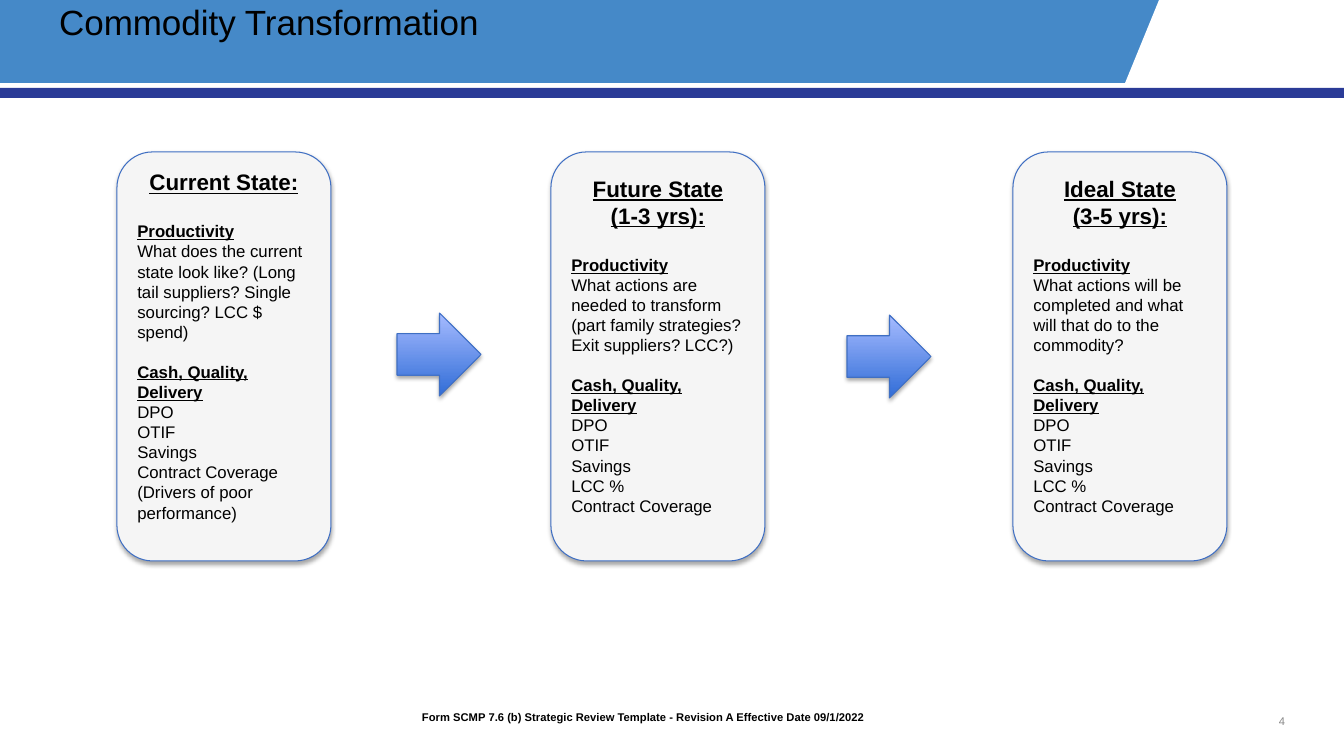
from lxml import etree
from pptx import Presentation
from pptx.dml.color import RGBColor
from pptx.enum.shapes import MSO_SHAPE as Preset
from pptx.enum.text import MSO_ANCHOR as Anchor, MSO_AUTO_SIZE as AutoSize, PP_ALIGN as Align
from pptx.oxml.ns import qn
from pptx.util import Pt

SCALE = 914400 / 100.8
COLORS = {
    "band": "4589C8", "rule": "2A3B97", "white": "FFFFFF", "black": "000000",
    "card": "F5F5F5", "outline": "3F6FC3", "arrow_dark": "316DD7",
    "arrow_light": "A6BBFF", "number": "888888",
}
PRODUCTIVITY = "Productivity"
DELIVERY = "Cash, Quality, Delivery"
MEASURES = ["DPO", "OTIF", "Savings"]
LATER_MEASURES = MEASURES + ["LCC %", "Contract Coverage"]
CARDS = [
    (117, ["Current State:"],
     "What does the current state look like? (Long tail suppliers? Single sourcing? LCC $ spend)",
     MEASURES + ["Contract Coverage", "(Drivers of poor performance)"]),
    (551, ["Future State", "(1-3 yrs):"],
     "What actions are needed to transform (part family strategies? Exit suppliers? LCC?)",
     LATER_MEASURES),
    (1013, ["Ideal State", "(3-5 yrs):"],
     "What actions will be completed and what will that do to the commodity?",
     LATER_MEASURES),
]
ARROWS = [(397, 313), (847, 315)]


def px(length):
    """Turn a length in px into EMU."""
    return round(length * SCALE)


def color(name):
    """Look up a named colour."""
    return RGBColor.from_string(COLORS[name])


def write(paragraph, text, size, tone="black", bold=False, underline=False, align=Align.LEFT):
    """Fill one paragraph and set its font."""
    paragraph.text = text
    paragraph.alignment = align
    font = paragraph.font
    font.name, font.size = "Arial", Pt(size)
    font.bold, font.underline = bold, underline
    font.color.rgb = color(tone)


def add_plain(slide, preset, box, fill):
    """Add a flat preset shape without an outline."""
    shape = slide.shapes.add_shape(preset, *map(px, box))
    shape.shadow.inherit = False
    shape.fill.solid()
    shape.fill.fore_color.rgb = color(fill)
    shape.line.fill.background()


def add_raised(slide, preset, box):
    """Add an outlined preset shape with a soft shadow below it."""
    shape = slide.shapes.add_shape(preset, *map(px, box))
    shape.line.color.rgb = color("outline")
    shape.line.width = Pt(0.75)
    shape.shadow.inherit = False
    effects = shape.element.spPr.find(qn("a:effectLst"))
    shadow = etree.SubElement(effects, qn("a:outerShdw"), blurRad=str(Pt(3.1)),
                              dist=str(Pt(1.8)), dir="5400000", rotWithShape="0")
    tone = etree.SubElement(shadow, qn("a:srgbClr"), val=COLORS["black"])
    etree.SubElement(tone, qn("a:alpha"), val="35000")
    return shape


def add_header(slide, box):
    """Draw the slanted band, the rule under it and the title."""
    left, top, width, height = box
    rule_top = top + height - 10
    add_plain(slide, Preset.RECTANGLE, (left, top, width - 14, 83), "band")
    right = left + width
    builder = slide.shapes.build_freeform(right - 185, top, scale=SCALE)
    builder.add_line_segments([(right, top), (right, rule_top), (right - 221, rule_top)])
    corner = builder.convert_to_shape()
    corner.shadow.inherit = False
    corner.fill.solid()
    corner.fill.fore_color.rgb = color("white")
    corner.line.fill.background()
    add_plain(slide, Preset.RECTANGLE, (left, rule_top, width, 10), "rule")

    title = slide.shapes.title
    title.element.getparent().append(title.element)
    title.left, title.top, title.width, title.height = map(px, (left + 49, top, 957, 96))
    frame = title.text_frame
    frame.auto_size = AutoSize.NONE
    frame.vertical_anchor = Anchor.TOP
    write(frame.paragraphs[0], "Commodity Transformation", 25)
    frame.paragraphs[0].line_spacing = 0.9


def add_card(slide, box, headings, question, measures):
    """Draw one state card with its headings, question and measures."""
    card = add_raised(slide, Preset.ROUNDED_RECTANGLE, box)
    card.fill.solid()
    card.fill.fore_color.rgb = color("card")
    frame = card.text_frame
    frame.word_wrap = True
    frame.vertical_anchor = Anchor.MIDDLE
    frame.margin_bottom = px(27)
    label = {"size": 12, "bold": True, "underline": True}
    heading = {"size": 16, "bold": True, "underline": True, "align": Align.CENTER}
    lines = [(text, heading, 0) for text in headings]
    lines += [(PRODUCTIVITY, label, 18.4), (question, {"size": 12}, 0), (DELIVERY, label, 13.8)]
    lines += [(text, {"size": 12}, 0) for text in measures]
    for index, (text, style, gap) in enumerate(lines):
        paragraph = frame.add_paragraph() if index else frame.paragraphs[0]
        write(paragraph, text, **style)
        if gap:
            paragraph.space_before = Pt(gap)


def add_arrow(slide, box):
    """Draw one arrow shaded from dark at the bottom to light at the top."""
    fill = add_raised(slide, Preset.RIGHT_ARROW, box).fill
    fill.gradient()
    fill.gradient_angle = 90
    for stop, tone in zip(fill.gradient_stops, ("arrow_dark", "arrow_light")):
        stop.color.rgb = color(tone)


def add_footer(slide, box):
    """Write the form reference and the slide number."""
    left, top, width, height = box
    form = slide.shapes.add_textbox(*map(px, (left, top + 6, 532, height - 2))).text_frame
    form.word_wrap = True
    form.margin_left = px(35)
    write(form.paragraphs[0],
          "Form SCMP 7.6 (b) Strategic Review Template - Revision A Effective Date 09/1/2022",
          8, bold=True)
    form.paragraphs[0].line_spacing = 0.9
    number = slide.shapes.add_textbox(*map(px, (left + width - 313, top, 313, height))).text_frame
    number.word_wrap = True
    number.vertical_anchor = Anchor.MIDDLE
    write(number.paragraphs[0], "4", 8, "number", align=Align.RIGHT)


def main():
    """Build and save the slide."""
    presentation = Presentation()
    presentation.slide_width, presentation.slide_height = px(1344), px(756)
    slide = presentation.slides.add_slide(presentation.slide_layouts[5])
    add_header(slide, (0, 0, 1344, 98))
    for left, headings, question, measures in CARDS:
        add_card(slide, (left, 152, 214, 409), headings, question, measures)
    for left, top in ARROWS:
        add_arrow(slide, (left, top, 84, 83))
    add_footer(slide, (387, 701, 908, 40))
    presentation.save("out.pptx")


if __name__ == "__main__":
    main()
